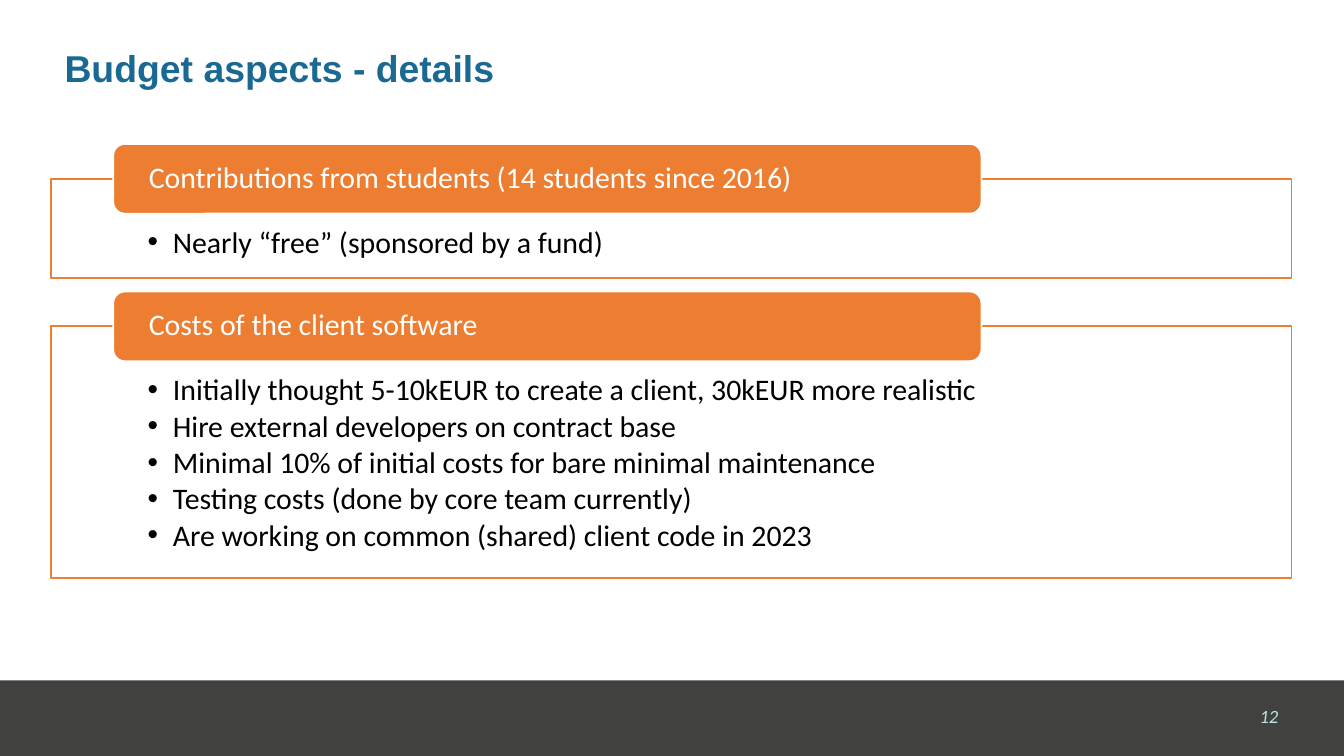
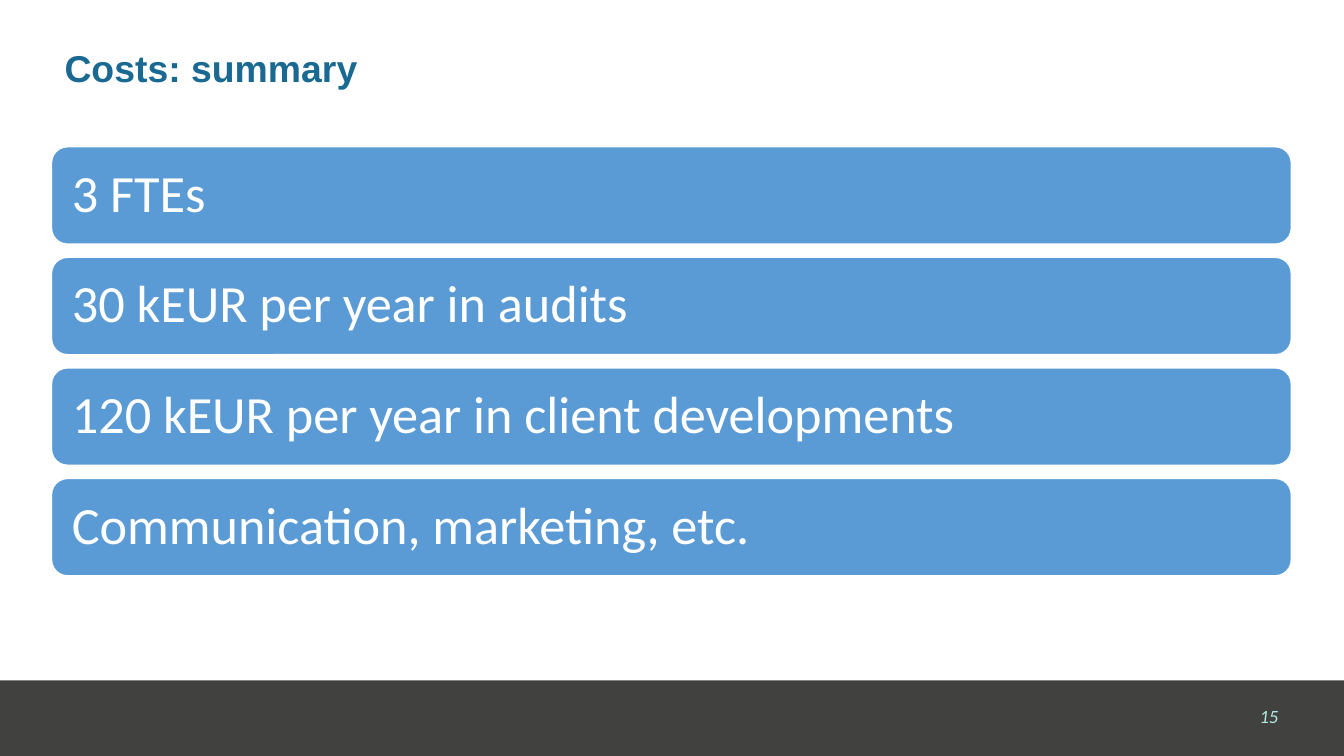
from lxml.etree import SubElement
from pptx import Presentation
from pptx.dml.color import RGBColor
from pptx.enum.shapes import MSO_SHAPE
from pptx.enum.text import MSO_ANCHOR, PP_ALIGN
from pptx.oxml.ns import qn
from pptx.util import Cm, Pt

# Shared colours and measures (cm)
WHITE, BLACK = "FFFFFF", "000000"
BLUE, ORANGE, SKY = "1A6992", "ED7D31", "5B9BD5"
DARK, MINT = "414140", "B4E9E2"
WIDE, HIGH = 25.4, 14.29
LEFT, SPAN = 0.97, 23.44

PANELS = [
    ("Contributions from students (14 students since 2016)",
     ["Nearly “free” (sponsored by a fund)"]),
    ("Costs of the client software",
     ["Initially thought 5-10kEUR to create a client, 30kEUR more realistic",
      "Hire external developers on contract base",
      "Minimal 10% of initial costs for bare minimal maintenance",
      "Testing costs (done by core team currently)",
      "Are working on common (shared) client code in 2023"]),
]
COSTS = ["3 FTEs", "30 kEUR per year in audits",
         "120 kEUR per year in client developments",
         "Communication, marketing, etc."]


def paint(target, color):
    """Give a fill or a line a solid colour."""
    target.solid()
    target.fore_color.rgb = RGBColor.from_string(color)


def write(shape, lines, size, color, name="Calibri", bold=None, italic=None,
          align=PP_ALIGN.LEFT, anchor=MSO_ANCHOR.MIDDLE,
          pad=(0.25, 0.13, 0.25, 0.13), bullet=False):
    """Fill a shape with styled lines; pad is left, top, right, bottom."""
    frame = shape.text_frame
    frame.word_wrap = True
    frame.vertical_anchor = anchor
    (frame.margin_left, frame.margin_top,
     frame.margin_right, frame.margin_bottom) = map(Cm, pad)
    frame.text = "\n".join(lines)
    for para in frame.paragraphs:
        if bullet:
            mark(para)
        para.alignment = align
        para.line_spacing = 0.9
        font = para.runs[0].font
        font.size, font.name, font.bold, font.italic = Pt(size), name, bold, italic
        font.color.rgb = RGBColor.from_string(color)


def mark(para):
    """Add a hanging bullet."""
    para.level = 1
    props = para._p.get_or_add_pPr()
    props.set("marL", str(Cm(0.48)))
    props.set("indent", str(-Cm(0.48)))
    SubElement(props, qn("a:buFont")).set("typeface", "Arial")
    SubElement(props, qn("a:buChar")).set("char", "•")
    para.space_after = Pt(2.2)


def block(slide, kind, box, fill, line=None):
    """Draw a flat shape, outlined if a line colour is given."""
    shape = slide.shapes.add_shape(kind, *map(Cm, box))
    shape.shadow.inherit = False
    paint(shape.fill, fill)
    if line:
        paint(shape.line.fill, line)
        shape.line.width = Pt(1)
    else:
        shape.line.fill.background()
    return shape


def label(slide, box, text, size, color, **style):
    write(slide.shapes.add_textbox(*map(Cm, box)), [text], size, color, **style)


def start(deck, title, page):
    """Add a slide with its title, footer band and page number."""
    slide = deck.slides.add_slide(deck.slide_layouts[6])
    block(slide, MSO_SHAPE.RECTANGLE, (0, 12.86, WIDE, HIGH - 12.86), DARK)
    label(slide, (18.69, 13.18, 5.72, 0.76), page, 10, MINT,
          italic=True, align=PP_ALIGN.RIGHT)
    label(slide, (LEFT, 0.36, SPAN, 1.93), title, 20, BLUE,
          name="Arial", bold=True)
    return slide


def panel(slide, top, head, points):
    """Draw a bullet frame with a header on its top edge; return its height."""
    high = 1.16 + 0.72 * len(points)
    frame = block(slide, MSO_SHAPE.RECTANGLE, (LEFT, top, SPAN, high),
                  WHITE, ORANGE)
    write(frame, points, 16, BLACK, anchor=MSO_ANCHOR.TOP,
          pad=(1.82, 0.92, 1.82, 0.3), bullet=True)
    tab = block(slide, MSO_SHAPE.ROUNDED_RECTANGLE,
                (2.14, top - 0.66, 16.41, 1.32), ORANGE, WHITE)
    write(tab, [head], 16, WHITE, pad=(0.61, 0, 0.61, 0))
    return high


def main():
    deck = Presentation()
    deck.slide_width, deck.slide_height = Cm(WIDE), Cm(HIGH)

    # Budget details: stacked panels
    slide = start(deck, "Budget aspects - details", "12")
    top = 3.38
    for head, points in PANELS:
        top += panel(slide, top, head, points) + 0.91

    # Cost summary: equal rows
    slide = start(deck, "Costs: summary", "15")
    for i, cost in enumerate(COSTS):
        row = block(slide, MSO_SHAPE.ROUNDED_RECTANGLE,
                    (LEFT, 2.77 + 2.09 * i, SPAN, 1.85), SKY, WHITE)
        write(row, [cost], 28, WHITE, pad=(0.3, 0.3, 0.3, 0.3))

    deck.save("out.pptx")


if __name__ == "__main__":
    main()
